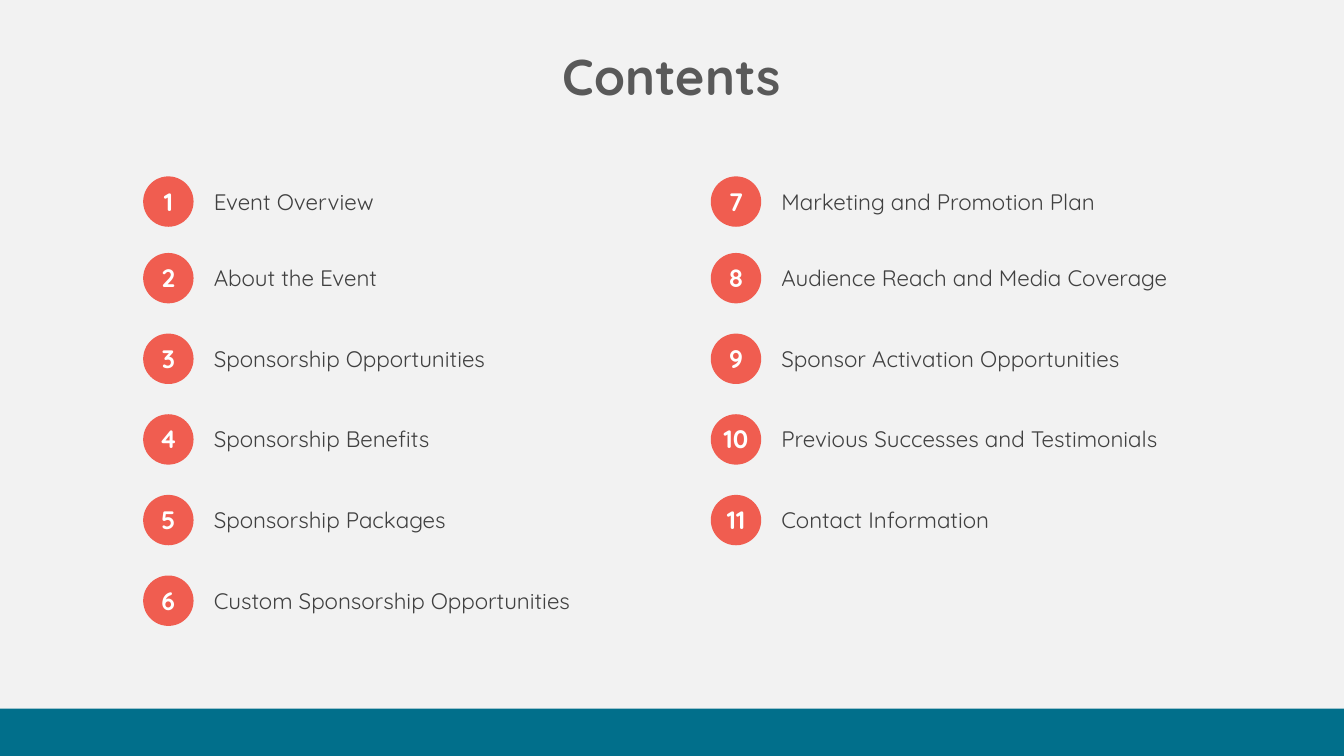
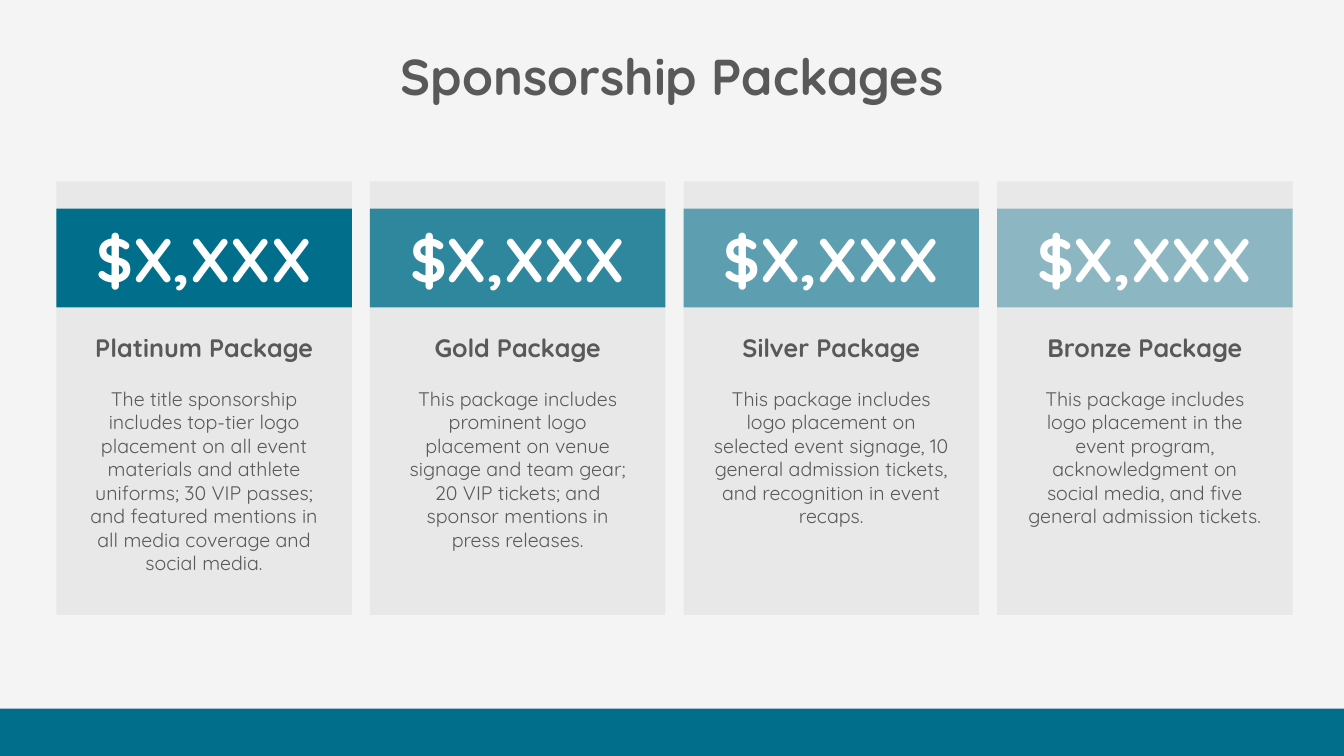
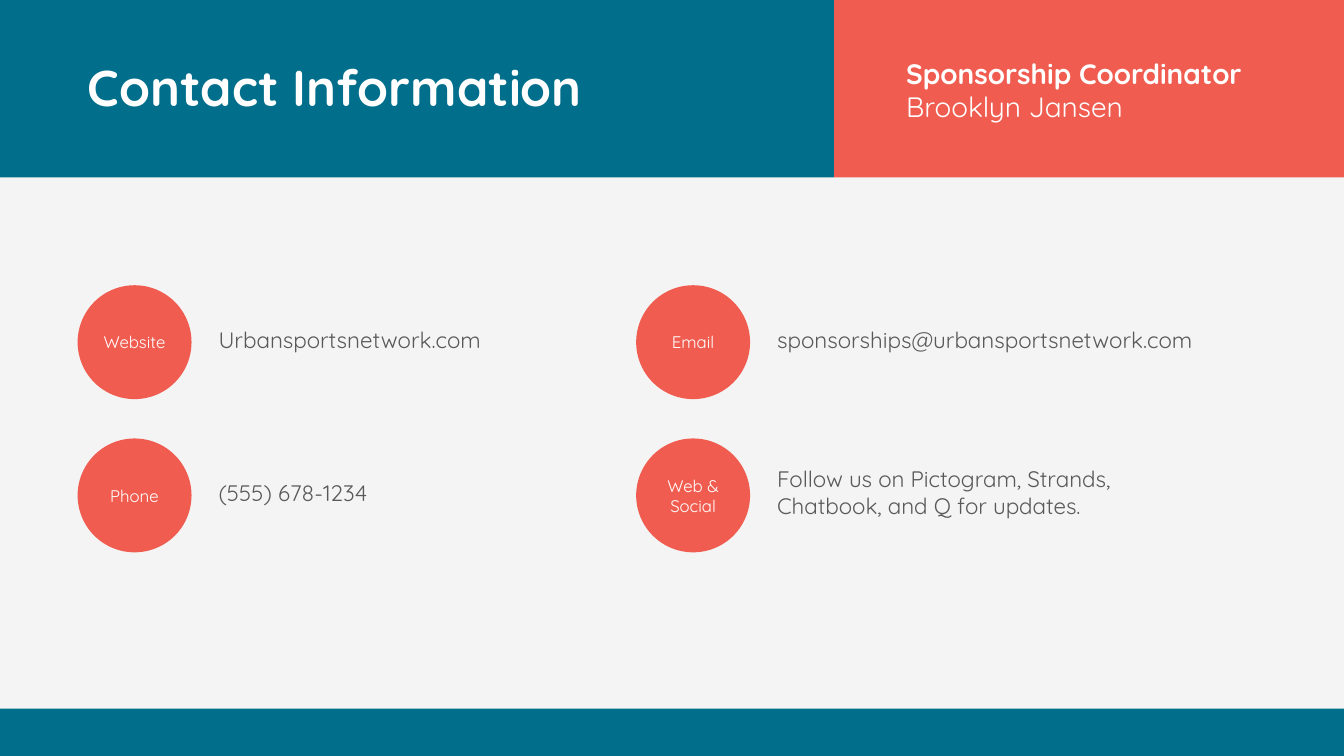
from pptx import Presentation
from pptx.dml.color import RGBColor
from pptx.enum import shapes, text
from pptx.oxml import ns
from pptx.util import Inches, Pt
from lxml import etree

TEAL, CORAL, WHITE = "016F8B", "F05D50", "FFFFFF"
GREY, DARK, CARD = "595959", "404040", "E7E6E6"
PALE, LIGHT = "F2F2F2", "F4F4F4"
FONT = "Quicksand"
PLAIN = "{2D5ABB26-0587-4C30-8999-92F81FD0307C}"  # no style, no grid
RECT, OVAL = shapes.MSO_SHAPE.RECTANGLE, shapes.MSO_SHAPE.OVAL
LEFT, MID = text.PP_ALIGN.LEFT, text.PP_ALIGN.CENTER
TOP, HALF = text.MSO_ANCHOR.TOP, text.MSO_ANCHOR.MIDDLE


def paint(fill, color, alpha=100):
    fill.solid()
    fill.fore_color.rgb = RGBColor.from_string(color)
    if alpha < 100:
        tone = fill._xPr.find(".//" + ns.qn("a:srgbClr"))
        etree.SubElement(tone, ns.qn("a:alpha"), val=str(alpha * 1000))


def write(para, words, size=16, color=GREY, bold=False, align=LEFT, gap=0):
    para.alignment = align
    para.space_before = Pt(gap)
    run = para.add_run()
    run.text = words
    font = run.font
    font.name, font.size, font.bold = FONT, Pt(size), bold
    font.color.rgb = RGBColor.from_string(color)


class Deck:
    def __init__(self):
        self.prs = Presentation()
        self.prs.slide_width = Inches(13.33)
        self.prs.slide_height = Inches(7.5)

    def start(self, back):
        self.slide = self.prs.slides.add_slide(self.prs.slide_layouts[6])
        paint(self.slide.background.fill, back)
        self.shape(RECT, 0, 7.03, 13.33, 0.47, TEAL)

    def shape(self, kind, x, y, w, h, color, alpha=100):
        item = self.slide.shapes.add_shape(
            kind, Inches(x), Inches(y), Inches(w), Inches(h))
        item.shadow.inherit = False
        item.line.fill.background()
        paint(item.fill, color, alpha)
        return item

    def frame(self, item, anchor=HALF, side=0.1, top=0.05):
        body = item.text_frame
        body.word_wrap = True
        body.vertical_anchor = anchor
        body.margin_left = body.margin_right = Inches(side)
        body.margin_top = Inches(top)
        return body

    def label(self, x, y, w, h, words, **form):
        box = self.slide.shapes.add_textbox(
            Inches(x), Inches(y), Inches(w), Inches(h))
        body = self.frame(box, TOP)
        write(body.paragraphs[0], words, **form)
        return body

    def title(self, words, x=2.0, y=0.4, w=9.33, color=GREY, align=MID):
        self.label(x, y, w, 0.71, words, size=36, color=color,
                   bold=True, align=align)

    def index(self, x, first, names):
        """A numbered list: discs behind a clear two-column table."""
        for i in range(len(names)):
            y = 1.71 + 0.8 * i if i else 1.75
            self.shape(OVAL, x, y, 0.5, 0.5, CORAL)
        high = 0.71 + 0.8 * (len(names) - 1)
        grid = self.slide.shapes.add_table(
            len(names), 2, Inches(x), Inches(1.65),
            Inches(5.44), Inches(high)).table
        grid.first_row = grid.horz_banding = False
        grid._tbl.tblPr.find(ns.qn("a:tableStyleId")).text = PLAIN
        grid.columns[0].width, grid.columns[1].width = Inches(0.5), Inches(4.94)
        for i, name in enumerate(names):
            grid.rows[i].height = Inches(0.8 if i else 0.71)
            num, cell = grid.cell(i, 0), grid.cell(i, 1)
            for part in (num, cell):
                part.fill.background()
                part.vertical_anchor = HALF
            cell.margin_left = Inches(0.2)
            write(num.text_frame.paragraphs[0], str(first + i), size=18,
                  color=WHITE, bold=True, align=MID)
            write(cell.text_frame.paragraphs[0], name, color=DARK)

    def card(self, x, name, about, alpha):
        """A package card with its price band."""
        body = self.frame(self.shape(RECT, x, 1.8, 2.93, 4.3, CARD, 80),
                          TOP, 0.3, 1.5)
        write(body.paragraphs[0], name, size=18, bold=True, align=MID)
        write(body.add_paragraph(), about, size=14, align=MID, gap=17)
        band = self.shape(RECT, x, 2.07, 2.93, 0.98, TEAL, alpha)
        write(self.frame(band).paragraphs[0], "$X,XXX", size=44,
              color=WHITE, bold=True, align=MID)

    def disc(self, x, y, words):
        item = self.shape(OVAL, x, y, 1.13, 1.13, CORAL)
        write(self.frame(item, side=0).paragraphs[0], words, size=12,
              color=WHITE, align=MID)


def main():
    deck = Deck()

    # Contents
    deck.start(PALE)
    deck.title("Contents")
    deck.index(1.42, 1, [
        "Event Overview", "About the Event", "Sponsorship Opportunities",
        "Sponsorship Benefits", "Sponsorship Packages",
        "Custom Sponsorship Opportunities"])
    deck.index(7.05, 7, [
        "Marketing and Promotion Plan", "Audience Reach and Media Coverage",
        "Sponsor Activation Opportunities",
        "Previous Successes and Testimonials", "Contact Information"])

    # Packages
    deck.start(LIGHT)
    deck.title("Sponsorship Packages")
    packs = [
        ("Platinum", "The title sponsorship includes top-tier logo placement "
         "on all event materials and athlete uniforms; 30 VIP passes; and "
         "featured mentions in all media coverage and social media."),
        ("Gold", "This package includes prominent logo placement on venue "
         "signage and team gear; 20 VIP tickets; and sponsor mentions in "
         "press releases."),
        ("Silver", "This package includes logo placement on selected event "
         "signage, 10 general admission tickets, and recognition in event "
         "recaps."),
        ("Bronze", "This package includes logo placement in the event "
         "program, acknowledgment on social media, and five general "
         "admission tickets."),
    ]
    for i, (name, about) in enumerate(packs):
        deck.card(0.56 + 3.11 * i, name + " Package", about, 100 - 20 * i)

    # Contact
    deck.start(LIGHT)
    deck.shape(RECT, 8.27, 0, 5.06, 1.76, CORAL)
    deck.shape(RECT, 0, 0, 8.27, 1.76, TEAL)
    deck.title("Contact Information", 0.77, 0.51, 5.66, WHITE, LEFT)
    lead = deck.label(8.89, 0.51, 3.94, 0.77, "Sponsorship Coordinator",
                      size=20, color=WHITE, bold=True)
    write(lead.add_paragraph(), "Brooklyn Jansen", size=20, color=WHITE)
    ways = [
        ("Website", "Urbansportsnetwork.com", 0.37),
        ("Email", "sponsorships@urbansportsnetwork.com", 0.37),
        ("Phone", "(555) 678-1234", 0.37),
        ("Web & Social", "Follow us on Pictogram, Strands, "
         "Chatbook, and Q for updates.", 0.64),
    ]
    for i, (name, words, high) in enumerate(ways):
        row, col = divmod(i, 2)
        x, y = 0.77 + 5.54 * col, 2.83 + 1.52 * row
        deck.disc(x, y, name)
        deck.label(x + 1.3, y + 0.54 - high / 2, 5.16 if row == 0 else 4.35,
                   high, words)

    deck.prs.save("out.pptx")


if __name__ == "__main__":
    main()
